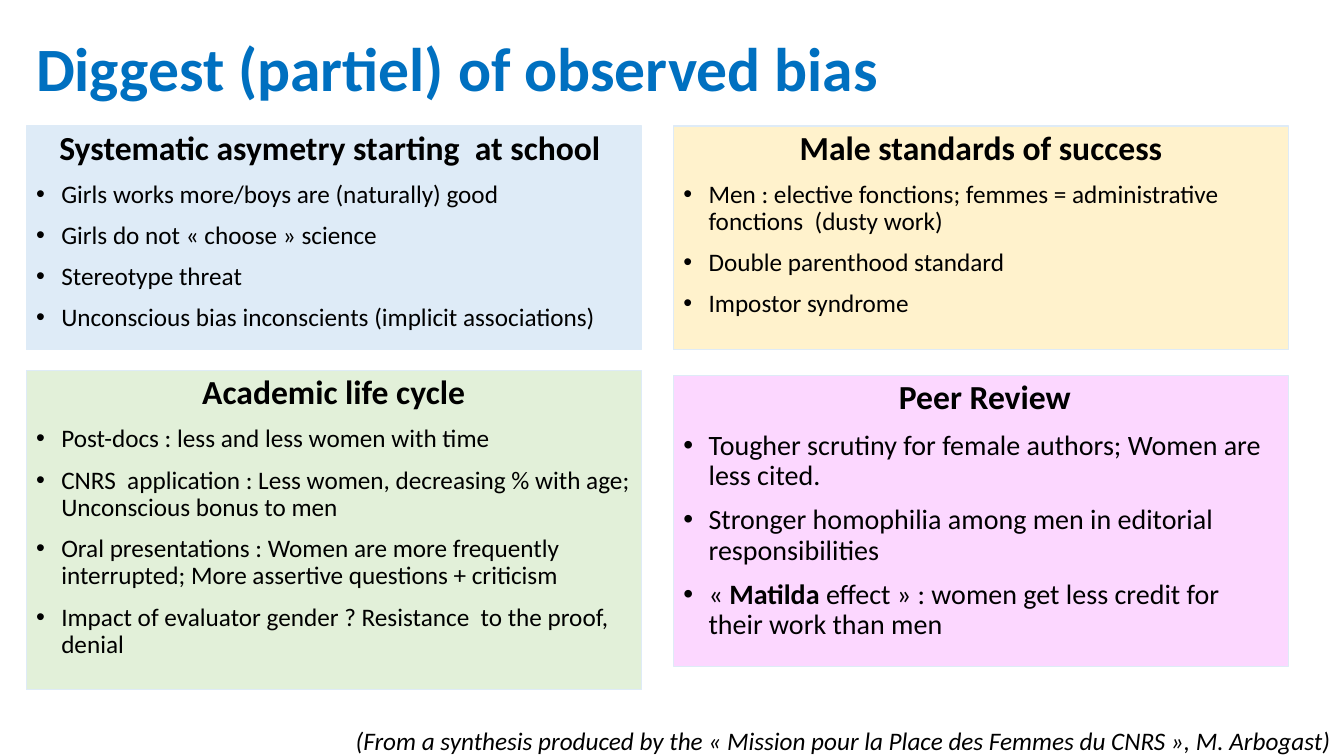
from pptx import Presentation
from pptx.dml.color import RGBColor
from pptx.enum.shapes import MSO_SHAPE
from pptx.enum.text import MSO_ANCHOR, MSO_AUTO_SIZE, PP_ALIGN
from pptx.oxml.ns import qn
from pptx.util import Inches, Pt
from lxml import etree

RECTANGLE = MSO_SHAPE.RECTANGLE
TOP = MSO_ANCHOR.TOP
FIT_SHAPE = MSO_AUTO_SIZE.SHAPE_TO_FIT_TEXT
LEFT, CENTER = PP_ALIGN.LEFT, PP_ALIGN.CENTER

BLACK = RGBColor(0x00, 0x00, 0x00)
TITLE_BLUE = RGBColor(0x00, 0x70, 0xC0)
PALE_BLUE = RGBColor(0xDE, 0xEB, 0xF7)
CREAM = RGBColor(0xFF, 0xF2, 0xCC)
PINK = RGBColor(0xFC, 0xD7, 0xFF)
PALE_GREEN = RGBColor(0xE2, 0xF0, 0xD9)

LEFT_X, RIGHT_X, PANEL_W = 0.26, 6.68, 6.1

PANELS = [
    (LEFT_X, 1.25, 2.22, PALE_BLUE, 18, "Systematic asymetry starting  at school ", [
        "Girls works more/boys are (naturally) good",
        "Girls do not « choose » science",
        "Stereotype threat",
        "Unconscious bias inconscients (implicit associations)",
    ]),
    (RIGHT_X, 1.25, 2.22, CREAM, 18, "Male standards of success", [
        "Men : elective fonctions; femmes = administrative fonctions  (dusty work)",
        "Double parenthood standard",
        "Impostor syndrome",
    ]),
    (RIGHT_X, 3.73, 2.88, PINK, 20, " Peer Review", [
        "Tougher scrutiny for female authors; Women are less cited.",
        "Stronger homophilia among men in editorial responsibilities",
        "« **Matilda **effect » : women get less credit for their work than men",
    ]),
    (LEFT_X, 3.68, 3.16, PALE_GREEN, 18, "Academic life cycle", [
        "Post-docs : less and less women with time",
        "CNRS  application : Less women, decreasing % with age; Unconscious bonus to men",
        "Oral presentations : Women are more frequently interrupted; "
        "More assertive questions + criticism",
        "Impact of evaluator gender ? Resistance  to the proof, denial",
    ]),
]


class SlideBuilder:
    """Draws text and bulleted panels on one slide in a shared style."""

    font = "Calibri"

    def __init__(self, slide):
        self.slide = slide

    def fill_paragraph(self, p, text, size, color=BLACK, bold=False, italic=False,
                       align=LEFT):
        p.alignment = align
        f = p.font
        f.name, f.size, f.bold, f.italic = self.font, Pt(size), bold, italic
        f.color.rgb = color
        for i, part in enumerate(text.split("**")):
            r = p.add_run()
            r.text = part
            if i % 2:
                r.font.bold = True

    def text(self, x, y, w, h, text, size, wrap=True, **style):
        tf = self.slide.shapes.add_textbox(
            Inches(x), Inches(y), Inches(w), Inches(h)).text_frame
        tf.word_wrap = wrap
        if not wrap:
            tf.auto_size = FIT_SHAPE
        self.fill_paragraph(tf.paragraphs[0], text, size, **style)
        return tf

    def bullet(self, p):
        pPr = p._p.get_or_add_pPr()
        pPr.set("marL", str(Inches(0.25)))
        pPr.set("indent", str(-Inches(0.25)))
        font = etree.Element(qn("a:buFont"), typeface="Arial")
        char = etree.Element(qn("a:buChar"), char="•")
        defaults = pPr.find(qn("a:defRPr"))
        defaults.addprevious(font)
        defaults.addprevious(char)

    def panel(self, x, y, h, fill, size, heading, items):
        sp = self.slide.shapes.add_shape(
            RECTANGLE, Inches(x), Inches(y), Inches(PANEL_W), Inches(h))
        sp.shadow.inherit = False
        sp.fill.solid()
        sp.fill.fore_color.rgb = fill
        sp.line.color.rgb = PALE_BLUE
        sp.line.width = Pt(0.75)
        tf = sp.text_frame
        tf.word_wrap = True
        tf.vertical_anchor = TOP
        self.fill_paragraph(tf.paragraphs[0], heading, 24, bold=True, align=CENTER)
        for item in items:
            self.fill_paragraph(tf.add_paragraph(), item, size)
        for p in tf.paragraphs:
            p.line_spacing = 0.9
            p.space_before = Pt(10)
        for p in tf.paragraphs[1:]:
            self.bullet(p)


def main():
    prs = Presentation()
    prs.slide_width, prs.slide_height = Inches(13.33), Inches(7.5)
    s = SlideBuilder(prs.slides.add_slide(prs.slide_layouts[6]))
    title = s.text(LEFT_X, 0.33, 12.37, 0.91, "Diggest (partiel) of observed bias", 44,
                   color=TITLE_BLUE, bold=True)
    title.paragraphs[0].line_spacing = 0.9
    s.text(3.43, 7.15, 10.09, 0.4,
           "(From a synthesis produced by the « Mission pour la Place des Femmes "
           "du CNRS », M. Arbogast)", 18, wrap=False, italic=True)
    for panel in PANELS:
        s.panel(*panel)
    prs.save("out.pptx")


if __name__ == "__main__":
    main()
